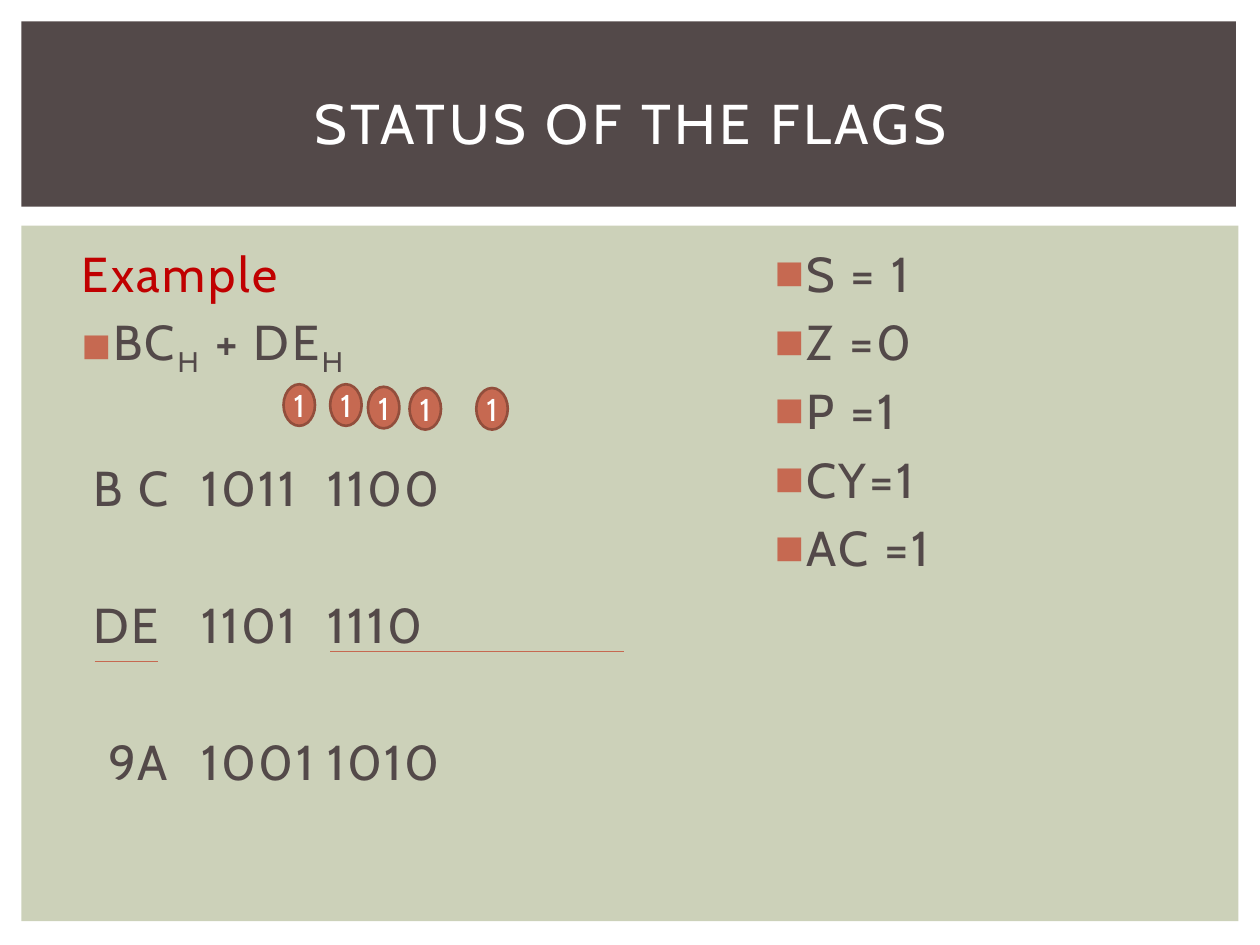
import pptx
import pptx.util
import pptx.dml.color
import pptx.enum.shapes
import pptx.enum.text
import pptx.oxml
import pptx.oxml.ns
from lxml import etree

Inches, Pt = pptx.util.Inches, pptx.util.Pt
SHAPE = pptx.enum.shapes.MSO_SHAPE
ANCHOR = pptx.enum.text.MSO_ANCHOR
CENTER = pptx.enum.text.PP_ALIGN.CENTER
FONT = "Cabin"
COLORS = {
    "panel": "CCD1B9", "dark": "534949", "accent": "C66951",
    "outline": "924E3C", "red": "C00000", "white": "FFFFFF",
}
GAP, ROW_GAP = 5.6, 44.8  # points before a paragraph, before a sum row


def rgb(name):
    return pptx.dml.color.RGBColor.from_string(COLORS[name])


def sub(parent, tag, **attrs):
    return etree.SubElement(parent, pptx.oxml.ns.qn(tag), **attrs)


def add_run(p, text, size, color, spacing=0, baseline=0):
    r = p.add_run()
    r.text = text
    r.font.name, r.font.size = FONT, Pt(size)
    r.font.color.rgb = rgb(color)
    props = r.font._element
    if spacing:
        props.set("spc", str(int(spacing * 100)))
    if baseline:
        props.set("baseline", str(baseline * 1000))


def add_body_run(p, text, color="dark", baseline=0):
    add_run(p, text, 28, color, 1.5, baseline)


def add_paragraph(tf, indent, margin=0, before=GAP, bullet=False, tabs=()):
    """Start a paragraph; indent is that of the first line, tabs are in inches."""
    first = tf.paragraphs[0]
    p = tf.add_paragraph() if first.runs else first
    p.space_before = Pt(before)
    props = p._p.get_or_add_pPr()
    props.set("marL", str(Inches(margin)))
    props.set("indent", str(Inches(indent)))
    if bullet:
        color = sub(props, "a:buClr")
        sub(color, "a:srgbClr", val=COLORS["accent"])
        sub(props, "a:buFont", typeface="Arial")
        sub(props, "a:buChar", char="■")
    else:
        sub(props, "a:buNone")
    if tabs:
        stops = sub(props, "a:tabLst")
        for tab in tabs:
            sub(stops, "a:tab", pos=str(Inches(tab)), algn="l")
    return p


def add_bullet(tf):
    return add_paragraph(tf, -0.25, 0.3, bullet=True)


def add_text_frame(s, left, top, width, height):
    box = s.shapes.add_textbox(Inches(left), Inches(top), Inches(width), Inches(height))
    tf = box.text_frame
    tf.word_wrap = True
    return tf


def add_filled(s, kind, left, top, width, height, fill):
    sp = s.shapes.add_shape(kind, Inches(left), Inches(top), Inches(width), Inches(height))
    sp.shadow.inherit = False
    sp.fill.solid()
    sp.fill.fore_color.rgb = rgb(fill)
    sp.line.fill.background()
    return sp


def add_carry(s, left, top):
    sp = add_filled(s, SHAPE.OVAL, left, top, 0.25, 0.33, "accent")
    sp.line.color.rgb = rgb("outline")
    sp.line.width = Pt(1.5)
    tf = sp.text_frame
    tf.word_wrap = False
    tf.vertical_anchor = ANCHOR.MIDDLE
    tf.margin_left = tf.margin_right = tf.margin_top = tf.margin_bottom = 0
    p = tf.paragraphs[0]
    p.alignment = CENTER
    add_run(p, "1", 18, "white")


def add_rule(s, left, right, y):
    line = s.shapes.add_connector(
        pptx.enum.shapes.MSO_CONNECTOR.STRAIGHT,
        Inches(left), Inches(y), Inches(right), Inches(y))
    line.line.color.rgb = rgb("accent")
    line.line.width = Pt(0.79)
    sub(line._element.spPr, "a:effectLst")


def set_title(s, text):
    title = s.shapes.title
    title.left, title.top = Inches(0.42), Inches(0.39)
    title.width, title.height = Inches(9.17), Inches(1.15)
    s.shapes._spTree.append(title._element)  # in front of the panels
    tf = title.text_frame
    tf.vertical_anchor = ANCHOR.MIDDLE
    p = tf.paragraphs[0]
    p.alignment = CENTER
    add_run(p, text, 32, "white", 2)


def add_example(s):
    tf = add_text_frame(s, 0.5, 1.88, 5.33, 4.82)
    add_body_run(add_paragraph(tf, 0.05), "Example", "red")
    p = add_bullet(tf)
    for text, baseline in (("BC", 0), ("H", -25), (" + DE", 0), ("H", -25)):
        add_body_run(p, text, baseline=baseline)
    sum_rows = (
        ("B C", "1011", "1100", 0.14, (1.89, 3.25)),
        ("DE", "1101", "1110", 0.14, (2.02, 3.02)),
        ("9A", "1001", "1010", 0.26, (2.02, 3.16)),
    )
    for label, high, low, indent, tabs in sum_rows:
        p = add_paragraph(tf, indent, before=ROW_GAP, tabs=tabs)
        add_body_run(p, f"{label}\t{high}\t{low}")


def add_flags(s):
    tf = add_text_frame(s, 6, 1.88, 3.5, 4.82)
    for flag in ("S = 1", "Z =0", "P =1", "CY=1", "AC =1"):
        add_body_run(add_bullet(tf), flag)


def main():
    prs = pptx.Presentation()
    prs.slide_width, prs.slide_height = Inches(10), Inches(7.5)
    s = prs.slides.add_slide(prs.slide_layouts[5])
    add_filled(s, SHAPE.RECTANGLE, 0.17, 1.79, 9.66, 5.52, "panel")
    add_filled(s, SHAPE.RECTANGLE, 0.17, 0.17, 9.64, 1.47, "dark")
    add_example(s)
    add_flags(s)
    set_title(s, "STATUS OF THE FLAGS")
    add_rule(s, 2.62, 4.95, 5.17)
    for left, top in ((3.78, 3.08), (3.25, 3.08), (2.92, 3.07), (2.62, 3.05), (2.25, 3.05)):
        add_carry(s, left, top)
    add_rule(s, 0.75, 1.25, 5.25)
    prs.save("out.pptx")


if __name__ == "__main__":
    main()
